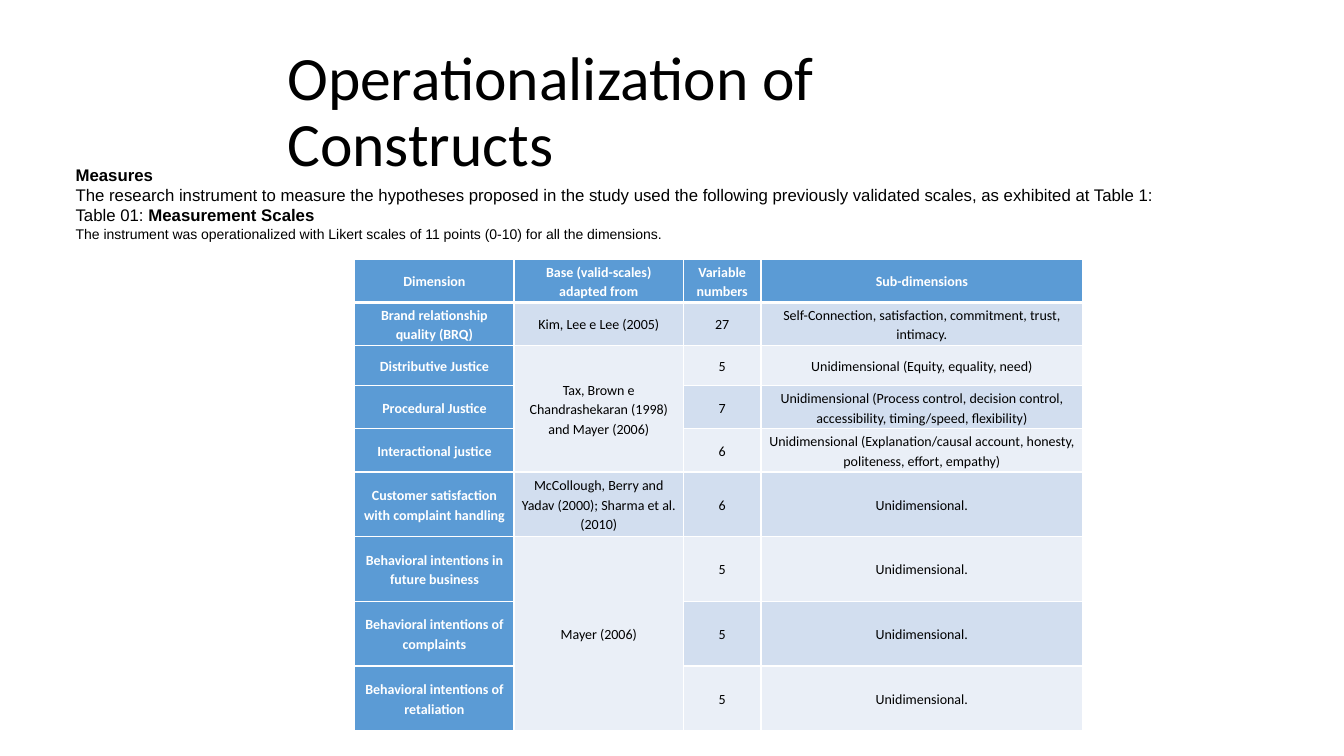
"""Build the slide that lists the measurement scales of each construct."""
from lxml.etree import SubElement
from pptx import Presentation
from pptx.dml.color import RGBColor
from pptx.enum.text import MSO_ANCHOR, MSO_AUTO_SIZE, PP_ALIGN
from pptx.oxml import parse_xml
from pptx.oxml.ns import nsdecls, qn
from pptx.util import Pt

BLACK = RGBColor(0x00, 0x00, 0x00)
WHITE = RGBColor(0xFF, 0xFF, 0xFF)
BLUE = RGBColor(0x5B, 0x9B, 0xD5)
DARK_BAND = RGBColor(0xD2, 0xDE, 0xEF)
LIGHT_BAND = RGBColor(0xEA, 0xEF, 0xF7)


def format_font(font, name, size, bold, color):
    font.name = name
    font.size = Pt(size)
    font.bold = bold
    font.color.rgb = color


def add_borders(cell, top, bottom):
    properties = cell._tc.get_or_add_tcPr()
    widths = {"lnL": 1, "lnR": 1, "lnT": top, "lnB": bottom}
    for position, (side, width) in enumerate(widths.items()):
        border = parse_xml(
            f'<a:{side} {nsdecls("a")} w="{Pt(width)}"><a:solidFill>'
            f'<a:srgbClr val="{WHITE}"/></a:solidFill></a:{side}>')
        properties.insert(position, border)


presentation = Presentation()
presentation.slide_width = Pt(960)
presentation.slide_height = Pt(540)
slide = presentation.slides.add_slide(presentation.slide_layouts[5])

title = slide.shapes.title
title.left, title.top, title.width, title.height = Pt(198), Pt(28.8), Pt(550.8), Pt(104.4)
title.text_frame.text = "Operationalization of Constructs"
title.text_frame.word_wrap = True
title.text_frame.auto_size = MSO_AUTO_SIZE.NONE
title.text_frame.vertical_anchor = MSO_ANCHOR.MIDDLE
title_paragraph = title.text_frame.paragraphs[0]
title_paragraph.alignment = PP_ALIGN.LEFT
title_paragraph.line_spacing = 0.9
format_font(title_paragraph.runs[0].font, "Calibri", 44, False, BLACK)

rows = [
    ("Dimension", "Base (valid-scales) adapted from", "Variable numbers", "Sub-dimensions"),
    ("Brand relationship quality (BRQ)", "Kim, Lee e Lee (2005)", "27",
     "Self-Connection, satisfaction, commitment, trust, intimacy."),
    ("Distributive Justice", "Tax, Brown e Chandrashekaran (1998) and Mayer (2006)", "5",
     "Unidimensional (Equity, equality, need)"),
    ("Procedural Justice", "", "7",
     "Unidimensional (Process control, decision control, accessibility, timing/speed, flexibility)"),
    ("Interactional justice", "", "6",
     "Unidimensional (Explanation/causal account, honesty, politeness, effort, empathy)"),
    ("Customer satisfaction with complaint handling",
     "McCollough, Berry and Yadav (2000); Sharma et al. (2010)", "6", "Unidimensional."),
    ("Behavioral intentions in future business", "Mayer (2006)", "5", "Unidimensional."),
    ("Behavioral intentions of complaints", "", "5", "Unidimensional."),
    ("Behavioral intentions of retaliation", "", "5", "Unidimensional."),
]
column_widths = [113.8, 121, 55.4, 229.8]
row_heights = [30.8, 30.8, 28.8, 30.8, 30.8] + [46.2] * 4
table = slide.shapes.add_table(
    len(rows), len(column_widths), Pt(253.4), Pt(185.2),
    Pt(sum(column_widths)), Pt(sum(row_heights))).table
for column, width in zip(table.columns, column_widths):
    column.width = Pt(width)
for row, height in zip(table.rows, row_heights):
    row.height = Pt(height)

for row_index, texts in enumerate(rows):
    band = DARK_BAND if row_index % 2 else LIGHT_BAND
    for column_index, text in enumerate(texts):
        heading = row_index == 0 or column_index == 0
        cell = table.cell(row_index, column_index)
        cell.fill.solid()
        cell.fill.fore_color.rgb = BLUE if heading else band
        add_borders(cell, 3 if row_index == 1 else 1, 3 if row_index == 0 else 1)
        cell.vertical_anchor = MSO_ANCHOR.MIDDLE
        cell.margin_left = cell.margin_right = Pt(5)
        cell.margin_top = cell.margin_bottom = Pt(0)
        cell.text_frame.text = text
        paragraph = cell.text_frame.paragraphs[0]
        paragraph.alignment = PP_ALIGN.CENTER
        paragraph.line_spacing = 1.15
        format_font(paragraph.font, "Calibri", 10, heading, WHITE if heading else BLACK)
        for run in paragraph.runs:
            format_font(run.font, "Calibri", 10, heading, WHITE if heading else BLACK)

for first_row in (2, 6):
    table.cell(first_row, 1).merge(table.cell(first_row + 2, 1))

measures = [
    (12, [("Measures", True)]),
    (12, [("The research instrument to measure the hypotheses proposed in the study used the "
           "following previously validated scales, as exhibited at Table 1:", False)]),
    (12, [("Table 01: ", False), ("Measurement Scales", True)]),
    (10, [("The instrument was operationalized with Likert scales of 11 points (0-10) "
           "for all the dimensions.", False)]),
]
measures_frame = slide.shapes.add_textbox(Pt(11.5), Pt(127.4), Pt(960), Pt(36)).text_frame
measures_frame.word_wrap = True
measures_frame.vertical_anchor = MSO_ANCHOR.MIDDLE
for index, (size, parts) in enumerate(measures):
    paragraph = measures_frame.add_paragraph() if index else measures_frame.paragraphs[0]
    paragraph.alignment = PP_ALIGN.JUSTIFY
    properties = paragraph._p.get_or_add_pPr()
    properties.set("indent", str(Pt(35.4)))
    tabs = SubElement(properties, qn("a:tabLst"))
    SubElement(tabs, qn("a:tab"), pos=str(Pt(391.7)), algn="l")
    for text, bold in parts:
        run = paragraph.add_run()
        run.text = text
        format_font(run.font, "Arial", size, bold, BLACK)

presentation.save("out.pptx")
